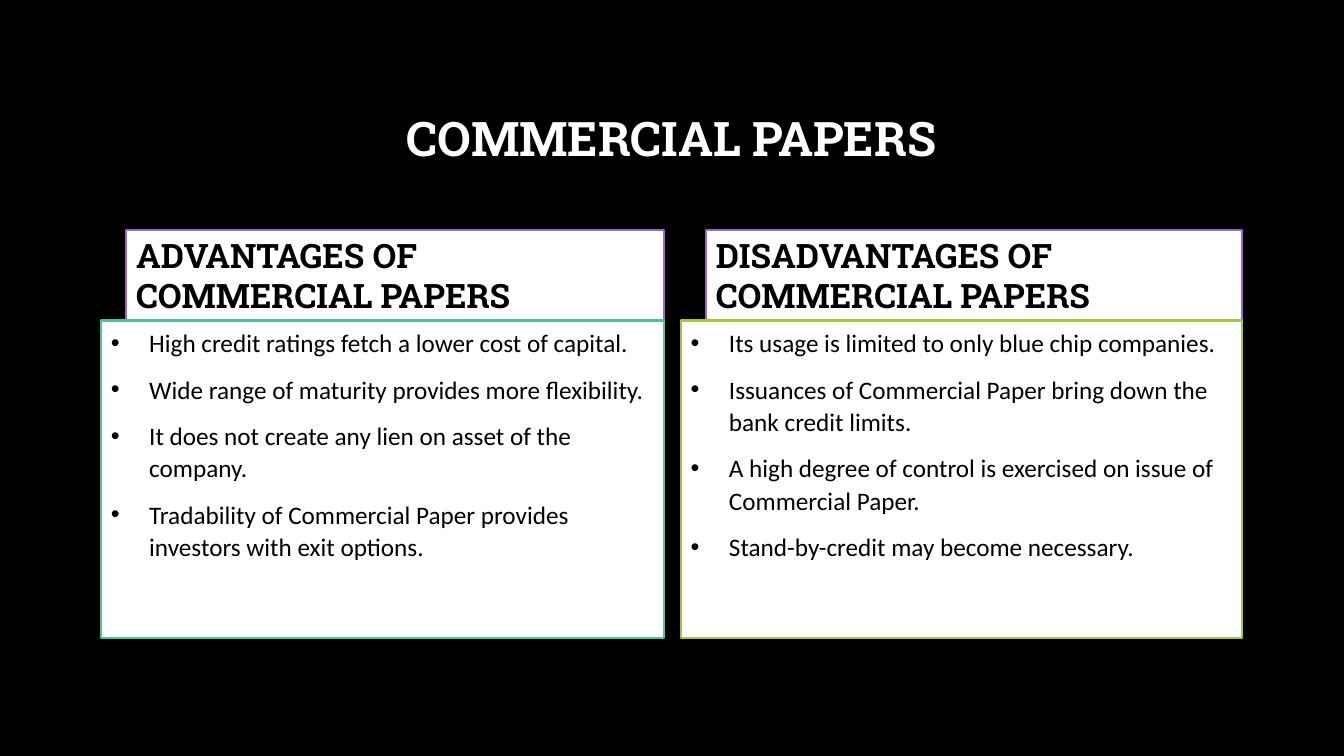
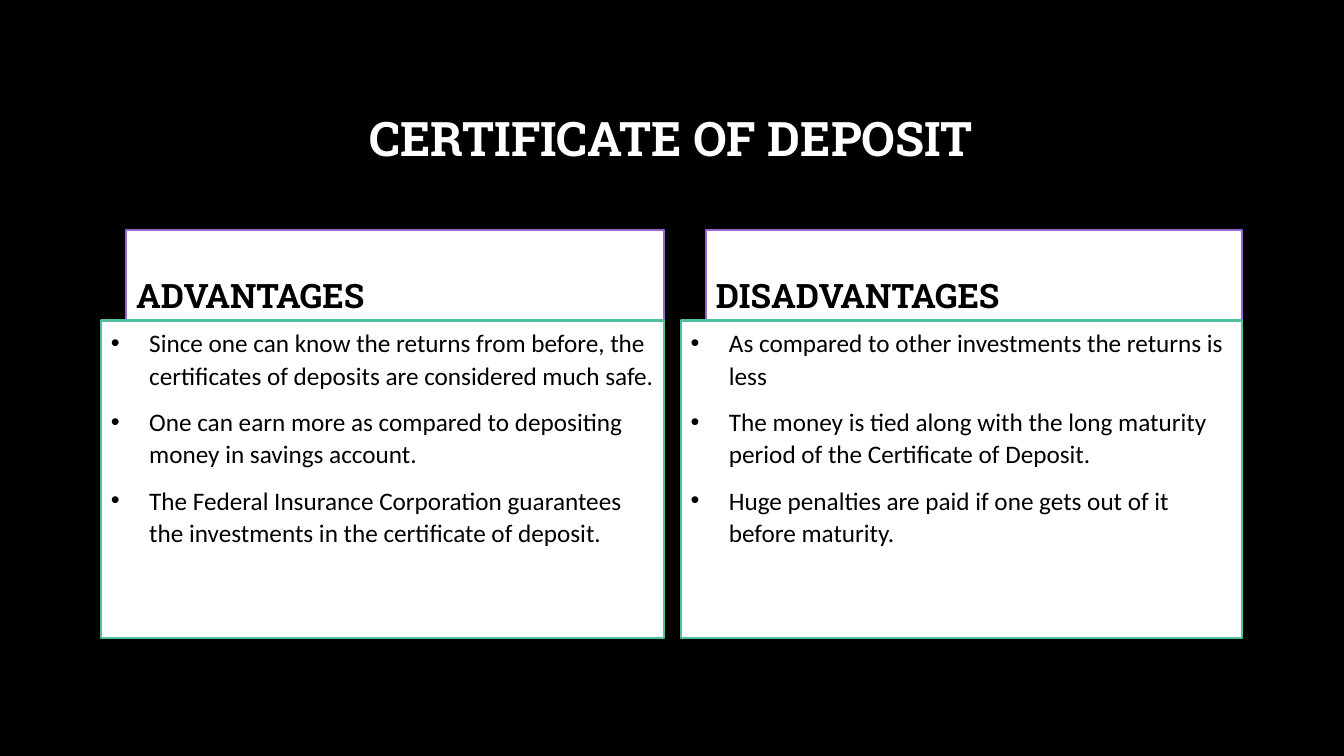
from pptx import Presentation
from pptx.dml.color import RGBColor
from pptx.enum.text import MSO_ANCHOR as Anchor, MSO_AUTO_SIZE as Fit, PP_ALIGN as Align
from pptx.util import Inches, Pt

BLACK, WHITE = "000000", "FFFFFF"
PURPLE, TEAL, LIME = "9A66CA", "50BEA3", "9EC544"
HEAD_FONT, BODY_FONT = "Roboto Slab", "Calibri"
COMPARISON = 4

TITLE_BOX = (1, 0.67, 11.32, 1.45)
HEAD_TOP, HEAD_HIGH = 2.28, 0.9
LIST_TOP, LIST_HIGH = HEAD_TOP + HEAD_HIGH, 3.15
HEAD_INSET, HANG = 0.25, 0.38
COLUMNS = ((1, 5.59), (6.75, 5.57))  # left, width

SLIDES = (
    ("COMMERCIAL PAPERS", (
        ("ADVANTAGES OF COMMERCIAL PAPERS", TEAL, (
            "High credit ratings fetch a lower cost of capital.",
            "Wide range of maturity provides more flexibility.",
            "It does not create any lien on asset of the company.",
            "Tradability of Commercial Paper provides investors with exit options.",
        )),
        ("DISADVANTAGES OF COMMERCIAL PAPERS", LIME, (
            "Its usage is limited to only blue chip companies.",
            "Issuances of Commercial Paper bring down the bank credit limits.",
            "A high degree of control is exercised on issue of Commercial Paper.",
            "Stand-by-credit may become necessary.",
        )),
    )),
    ("CERTIFICATE OF DEPOSIT", (
        ("ADVANTAGES", TEAL, (
            "Since one can know the returns from before, the certificates of "
            "deposits are considered much safe.",
            "One can earn more as compared to depositing money in savings account.",
            "The Federal Insurance Corporation guarantees the investments in the "
            "certificate of deposit.",
        )),
        ("DISADVANTAGES", TEAL, (
            "As compared to other investments the returns is less",
            "The money is tied along with the long maturity period of the "
            "Certificate of Deposit.",
            "Huge penalties are paid if one gets out of it before maturity.",
        )),
    )),
)


def paint(color, value):
    color.rgb = RGBColor.from_string(value)


def place(holder, box, anchor):
    holder.left, holder.top, holder.width, holder.height = map(Inches, box)
    frame = holder.text_frame
    frame.word_wrap = True
    frame.auto_size = Fit.NONE
    frame.vertical_anchor = anchor
    return frame


def frame_panel(holder, edge):
    """Give a placeholder its white fill and coloured outline."""
    holder.fill.solid()
    paint(holder.fill.fore_color, WHITE)
    paint(holder.line.color, edge)
    holder.line.width = Pt(1.5)


def write(para, text, size, font, color, bold, align=Align.LEFT, before=0, spacing=1.0):
    para.alignment = align
    para.space_before = Pt(before)
    para.line_spacing = spacing
    run = para.add_run()
    run.text = text
    run.font.size = Pt(size)
    run.font.name = font
    run.font.bold = bold
    paint(run.font.color, color)


def add_title(holder, text):
    frame = place(holder, TITLE_BOX, Anchor.MIDDLE)
    write(frame.paragraphs[0], text, 34, HEAD_FONT, WHITE, True, Align.CENTER, spacing=0.9)


def add_head(holder, left, width, text):
    box = (left + HEAD_INSET, HEAD_TOP, width - HEAD_INSET, HEAD_HIGH)
    frame = place(holder, box, Anchor.BOTTOM)
    frame_panel(holder, PURPLE)
    write(frame.paragraphs[0], text, 24, HEAD_FONT, BLACK, True, before=10)


def add_list(holder, left, width, edge, items):
    frame = place(holder, (left, LIST_TOP, width, LIST_HIGH), Anchor.TOP)
    frame_panel(holder, edge)
    for i, item in enumerate(items):
        para = frame.add_paragraph() if i else frame.paragraphs[0]
        write(para, item, 18, BODY_FONT, BLACK, False, before=10, spacing=1.07)
        props = para._p.get_or_add_pPr()
        props.set("marL", str(Inches(HANG)))
        props.set("indent", str(-Inches(HANG)))


def add_slide(deck, title, sides):
    slide = deck.slides.add_slide(deck.slide_layouts[COMPARISON])
    holders = list(slide.placeholders)
    add_title(holders[0], title)
    pairs = zip(holders[1::2], holders[2::2])
    for (head, body), (left, width), (text, edge, items) in zip(pairs, COLUMNS, sides):
        add_head(head, left, width, text)
        add_list(body, left, width, edge, items)


def main():
    deck = Presentation()
    deck.slide_width, deck.slide_height = Inches(13.33), Inches(7.5)
    back = deck.slide_master.background.fill
    back.solid()
    paint(back.fore_color, BLACK)
    for title, sides in SLIDES:
        add_slide(deck, title, sides)
    deck.save("out.pptx")


if __name__ == "__main__":
    main()
